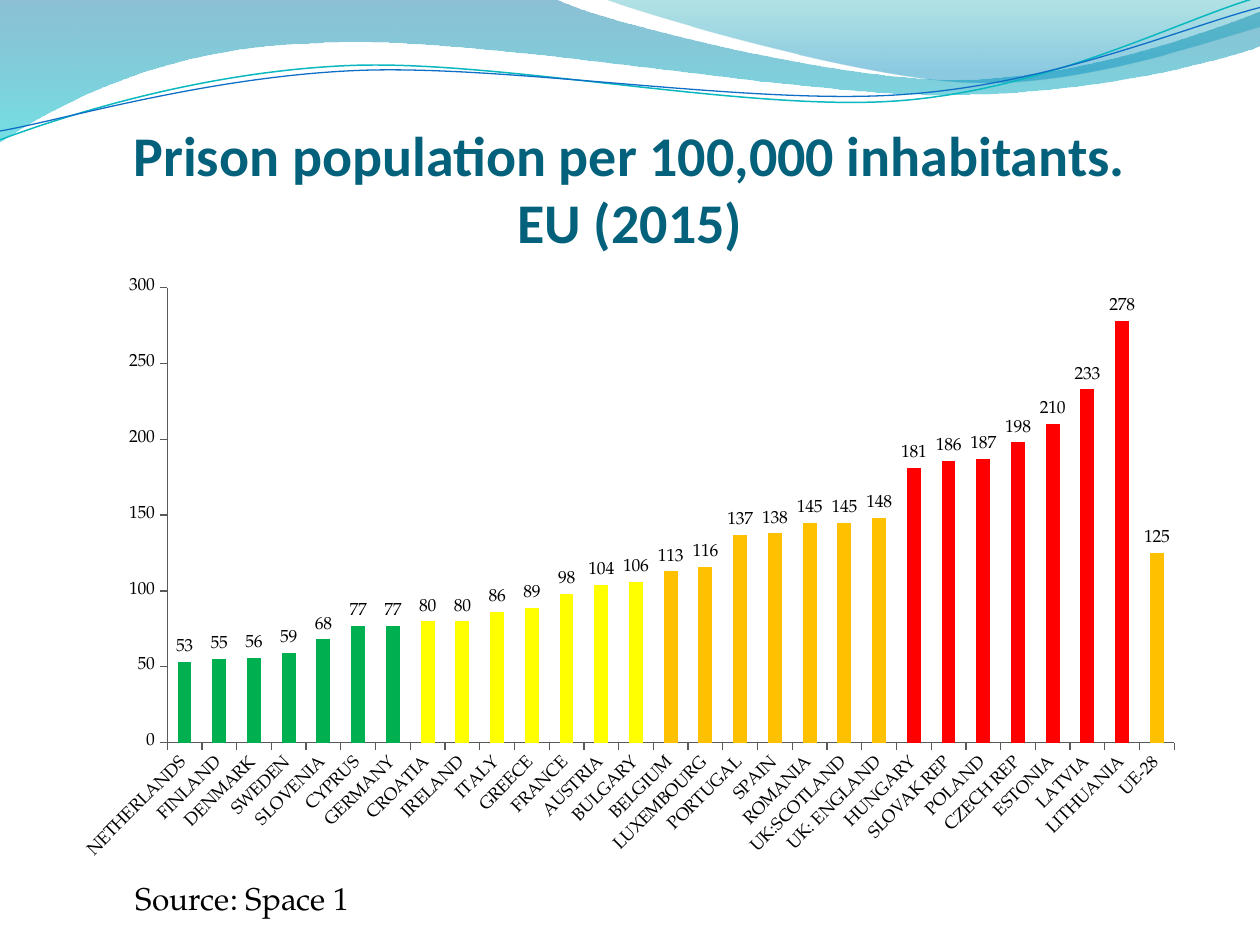
from math import cos, radians, sin
from lxml import etree
from pptx import Presentation
from pptx.chart.data import CategoryChartData
from pptx.dml.color import RGBColor
from pptx.enum import chart as ch, text
from pptx.oxml import ns
from pptx.util import Inches, Pt

HUES = {
    "title": "04617B", "text": "000000", "axis": "595959", "bar": "0F6FC6",
    "green": "00B050", "yellow": "FFFF00", "amber": "FFC000", "red": "FF0000",
    "blue": "0074A1", "cyan": "00C6CF", "teal": "00A1A9", "sky": "008BBF",
    "aqua": "0AB8BF", "navy": "0F6FC6",
}
SERIF = "TeX Gyre Pagella"
RATES = {
    "NETHERLANDS": 53, "FINLAND": 55, "DENMARK": 56, "SWEDEN": 59,
    "SLOVENIA": 68, "CYPRUS": 77, "GERMANY": 77, "CROATIA": 80,
    "IRELAND": 80, "ITALY": 86, "GREECE": 89, "FRANCE": 98,
    "AUSTRIA": 104, "BULGARY": 106, "BELGIUM": 113, "LUXEMBOURG": 116,
    "PORTUGAL": 137, "SPAIN": 138, "ROMANIA": 145, "UK:SCOTLAND": 145,
    "UK: ENGLAND": 148, "HUNGARY": 181, "SLOVAK REP": 186, "POLAND": 187,
    "CZECH REP": 198, "ESTONIA": 210, "LATVIA": 233, "LITHUANIA": 278,
    "UE-28": 125,
}
BANDS = [(80, "green"), (110, "yellow"), (150, "amber"), (300, "red")]

# Each step is an end point (2 numbers) or a Bezier curve (6 numbers).
BACK = [(0, 0), (4.4, -0.01), (4.76, 0.17, 6.64, 0.63, 7.58, 0.63),
        (8.53, 0.63, 9.58, 0.26, 10, 0.09), (10.01, 0.36),
        (9.83, 0.44, 8.7, 0.76, 7.46, 0.75),
        (6.22, 0.75, 3.82, 0.28, 2.57, 0.34),
        (1.29, 0.36, 0.46, 0.83, -0.01, 1.13)]
FRONT = [(4.79, -0.01), (5.09, 0.11, 6.82, 0.62, 7.69, 0.65),
         (8.56, 0.69, 9.61, 0.32, 10, 0.21), (10, 0)]
UPPER = [(0, 1.11), (0.48, 0.93, 1.58, 0.57, 2.77, 0.52),
         (3.95, 0.47, 5.93, 0.89, 7.13, 0.8),
         (8.33, 0.71, 9.38, 0.15, 9.98, -0.02)]
LOWER = [(0, 1.04), (0.47, 0.96, 1.64, 0.61, 2.83, 0.56),
         (4.03, 0.51, 5.97, 0.84, 7.17, 0.75),
         (8.36, 0.67, 9.41, 0.21, 10, 0.06)]
TILT = -2.7


def rgb(name):
    return RGBColor.from_string(HUES[name])


def pairs(step):
    return list(zip(step[::2], step[1::2]))


def spin(steps, hub, angle):
    """Turn every point of the steps about the hub."""
    c, s = cos(radians(angle)), sin(radians(angle))
    turned = []
    for step in steps:
        flat = []
        for x, y in pairs(step):
            dx, dy = x - hub[0], y - hub[1]
            flat += [hub[0] + dx * c - dy * s, hub[1] + dx * s + dy * c]
        turned.append(tuple(flat))
    return turned


def outline(slide, steps, box, close):
    """Freeform whose six-number steps become true Bezier curves."""
    left, top = box
    pts = [(Inches(left + x), Inches(top + y))
           for step in steps for x, y in pairs(step)]
    pen = slide.shapes.build_freeform(*pts[0])
    pen.add_line_segments(pts[1:], close=close)
    shape = pen.convert_to_shape()
    shape.shadow.inherit = False
    lines = shape._element.spPr.iter(ns.qn("a:lnTo"))
    lines = iter(list(lines))
    for step in steps[1:]:
        first = next(lines)
        if len(step) == 6:
            first.tag = ns.qn("a:cubicBezTo")
            for _ in range(2):
                line = next(lines)
                first.append(line[0])
                line.getparent().remove(line)
    return shape


def wave(slide, steps, box, stops):
    """Filled wave; stops hold position, colour and opacity in percent."""
    shape = outline(slide, steps, box, True)
    shape.line.fill.background()
    shape.fill.gradient()
    shape.fill.gradient_angle = 270
    for stop, (pos, hue, alpha) in zip(shape.fill.gradient_stops, stops):
        stop.position = pos / 100
        stop.color.rgb = rgb(hue)
    tints = shape._element.spPr.find(ns.qn("a:gradFill")).iter(ns.qn("a:srgbClr"))
    for tint, (pos, hue, alpha) in zip(tints, stops):
        etree.SubElement(tint, ns.qn("a:alpha")).set("val", str(alpha * 1000))


def strand(slide, steps, box, hub, hue, width):
    """Thin curve, laid level and then tilted about its hub."""
    shape = outline(slide, spin(steps, hub, -TILT), box, False)
    shape.rotation = TILT
    shape.fill.background()
    shape.line.color.rgb = rgb(hue)
    shape.line.width = Pt(width)


def banner(slide, box):
    wave(slide, BACK, box, [(0, "blue", 45), (100, "cyan", 55)])
    wave(slide, FRONT, box, [(0, "teal", 30), (80, "sky", 45)])
    strand(slide, UPPER, box, (4.99, 0.57), "aqua", 0.85)
    strand(slide, LOWER, box, (5, 0.59), "navy", 0.75)


def place(shape, box):
    shape.left, shape.top, shape.width, shape.height = map(Inches, box)


def style(font, size, hue, name=SERIF, bold=False):
    font.size, font.name, font.bold = Pt(size), name, bold
    font.color.rgb = rgb(hue)


def heading(slide, box, lines):
    title = slide.shapes.title
    slide.shapes._spTree.append(title._element)
    place(title, box)
    frame = title.text_frame
    frame.word_wrap = True
    frame.auto_size = text.MSO_AUTO_SIZE.NONE
    frame.vertical_anchor = text.MSO_ANCHOR.BOTTOM
    frame.margin_left = frame.margin_right = frame.margin_bottom = 0
    frame.margin_top = Inches(0.05)
    para = frame.paragraphs[0]
    para.alignment = text.PP_ALIGN.CENTER
    for i, line in enumerate(lines):
        if i:
            para.add_line_break()
        run = para.add_run()
        run.text = line
        style(run.font, 32, "title", "Calibri", True)


def bars(slide, box):
    data = CategoryChartData(number_format="0")
    data.categories = list(RATES)
    data.add_series("Series 1", RATES.values())
    chart = slide.shapes.add_chart(ch.XL_CHART_TYPE.COLUMN_CLUSTERED,
                                   *map(Inches, box), data).chart
    chart.has_legend = chart.has_title = False
    style(chart.font, 10, "text")
    for axis in (chart.category_axis, chart.value_axis):
        axis.has_major_gridlines = False
        axis.major_tick_mark = ch.XL_TICK_MARK.OUTSIDE
        axis.minor_tick_mark = ch.XL_TICK_MARK.NONE
        axis.format.line.color.rgb = rgb("axis")
        axis.format.line.width = Pt(0.75)
    scale = chart.value_axis
    scale.tick_labels.number_format = "0"
    scale.tick_labels.number_format_is_linked = False

    plot = chart.plots[0]
    plot.gap_width = 150
    plot.vary_by_categories = False
    plot.has_data_labels = True
    tags = plot.data_labels
    tags.show_value = True
    tags.number_format, tags.number_format_is_linked = "0", False
    row = plot.series[0]
    row.format.fill.solid()
    row.format.fill.fore_color.rgb = rgb("bar")
    for i, rate in enumerate(RATES.values()):
        fill = row.points[i].format.fill
        fill.solid()
        fill.fore_color.rgb = rgb(next(hue for top, hue in BANDS if rate < top))


def source(slide, box, words):
    frame = slide.shapes.add_textbox(*map(Inches, box)).text_frame
    frame.word_wrap = True
    frame.auto_size = text.MSO_AUTO_SIZE.SHAPE_TO_FIT_TEXT
    run = frame.paragraphs[0].add_run()
    run.text = words
    style(run.font, 18, "text")


def main():
    deck = Presentation()
    deck.slide_width, deck.slide_height = Inches(10), Inches(7.5)
    slide = deck.slides.add_slide(deck.slide_layouts[5])
    banner(slide, (0, 0))
    heading(slide, (0.5, 0.77, 9, 1.25),
            ["Prison population per 100,000 inhabitants.", "EU (2015)"])
    bars(slide, (0.5, 2.12, 9, 4.8))
    source(slide, (0.98, 6.93, 1.97, 0.4), "Source: Space 1")
    deck.save("out.pptx")


if __name__ == "__main__":
    main()
